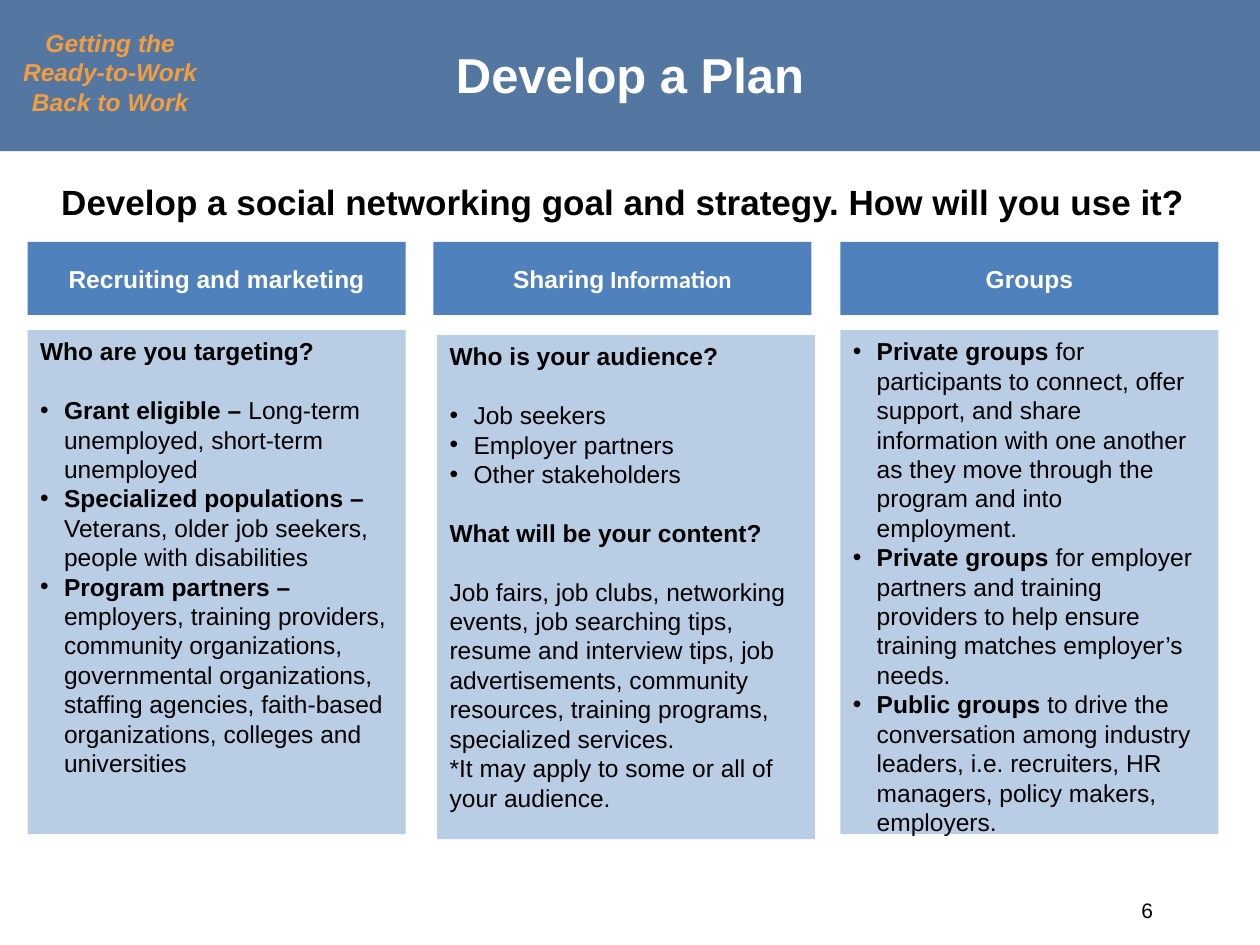
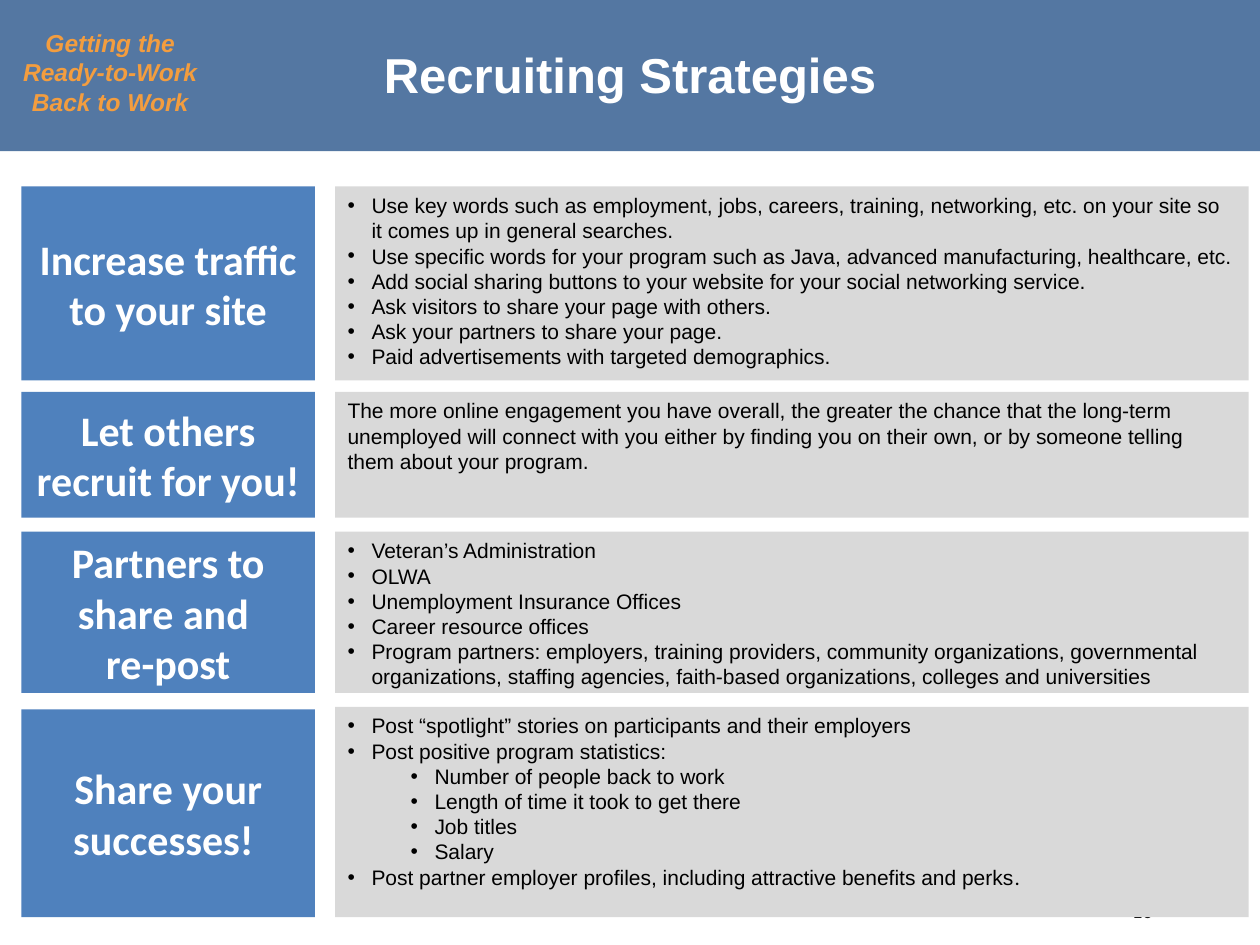
from lxml import etree
from pptx import Presentation
from pptx.dml.color import RGBColor
from pptx.enum.shapes import MSO_SHAPE
from pptx.enum.text import MSO_ANCHOR as Anchor, PP_ALIGN as Align
from pptx.oxml.ns import qn
from pptx.util import Inches, Pt

WHITE = RGBColor(0xFF, 0xFF, 0xFF)
BLACK = RGBColor(0x00, 0x00, 0x00)
BAND = RGBColor(0x37, 0x60, 0x92)
ORANGE = RGBColor(0xF3, 0x9D, 0x3F)
BLUE = RGBColor(0x4F, 0x81, 0xBD)
PALE_BLUE = RGBColor(0xB9, 0xCD, 0xE5)
GREY = RGBColor(0xD9, 0xD9, 0xD9)

TAGLINE = "Getting the Ready-to-Work Back to Work"

# Fonts: size in points, typeface, colour
TITLE = dict(size=28, name="Arial", color=WHITE, bold=True)
TAG = dict(size=14, name="Arial", color=ORANGE, bold=True, italic=True)
QUESTION = dict(size=20, name="Arial", color=BLACK, bold=True)
COLUMN_HEAD = dict(size=14, name="Arial", color=WHITE, bold=True)
COLUMN_TEXT = dict(size=14, name="Arial", color=BLACK, bold=False)
ROW_HEAD = dict(size=24, name="Calibri", color=WHITE, bold=True)
ROW_TEXT = dict(size=12, name="Arial", color=BLACK)
PAGE_ARIAL = dict(size=12, name="Arial", color=BLACK)
PAGE_CALIBRI = dict(PAGE_ARIAL, name="Calibri")

BOLD = dict(bold=True)
CALIBRI = dict(name="Calibri")

# A paragraph is (kind, run, run, ...); a run is a string or (string, font changes).
# Kind: left margin of a bullet in inches (None for no bullet), then lines of space before.
PLAIN, SPACED = (None, 0), (None, 1)
BULLET, FIRST_BULLET, SUB_BULLET = (0.19, 0), (0.19, 1), (0.69, 0)
HANGING = 0.19

PLAN_QUESTION = "Develop a social networking goal and strategy. How will you use it?"

# Left of the heading, heading runs, left and top of the body, body paragraphs
PLAN_COLUMNS = [
    (0.22, ["Recruiting and marketing"], 0.22, 2.62, [
        (PLAIN, ("Who are you targeting?", BOLD)),
        (FIRST_BULLET, ("Grant eligible – ", BOLD), "Long-term unemployed, short-term unemployed"),
        (BULLET, ("Specialized populations – ", BOLD),
         "Veterans, older job seekers, people with disabilities"),
        (BULLET, ("Program partners – ", BOLD),
         "employers, training providers, community organizations, governmental organizations, "
         "staffing agencies, faith-based organizations, colleges and universities"),
    ]),
    (3.44, ["Sharing", (" Information", CALIBRI)], 3.47, 2.66, [
        (PLAIN, ("Who is your audience?", BOLD)),
        (FIRST_BULLET, "Job seekers"),
        (BULLET, "Employer partners"),
        (BULLET, "Other stakeholders"),
        (SPACED, ("What will be your content?", BOLD)),
        (SPACED, "Job fairs, job clubs, networking events, job searching tips, resume and "
                 "interview tips, job advertisements, community resources, training programs, "
                 "specialized services."),
        (PLAIN, "*It may apply to some or all of your audience."),
    ]),
    (6.67, ["Groups"], 6.67, 2.62, [
        (BULLET, ("Private groups ", BOLD),
         "for participants to connect, offer support, and share information with one another "
         "as they move through the program and into employment."),
        (BULLET, ("Private groups ", BOLD),
         "for employer partners and training providers to help ensure training matches "
         "employer’s needs."),
        (BULLET, ("Public groups ", BOLD),
         "to drive the conversation among industry leaders, i.e. recruiters, HR managers, "
         "policy makers, employers."),
    ]),
]

# Top of the label, top of the text, shared bottom, label lines, text paragraphs
STRATEGY_ROWS = [
    (1.48, 1.48, 3.02, ["Increase traffic to your site"], [
        (BULLET, "Use key words such as employment, jobs, careers, training, networking, etc. "
                 "on your site so it comes up in general searches."),
        (BULLET, "Use specific words for your program such as Java, advanced manufacturing, "
                 "healthcare, etc."),
        (BULLET, "Add social sharing buttons to your website for your social networking service."),
        (BULLET, "Ask visitors to share your page with others."),
        (BULLET, "Ask your partners to share your page."),
        (BULLET, "Paid advertisements with targeted demographics."),
    ]),
    (3.11, 3.11, 4.11, ["Let others recruit for you!"], [
        (PLAIN, "The more online engagement you have overall, the greater the chance that the "
                "long-term unemployed will connect with you either by finding you on their own, "
                "or by someone telling them about your program."),
    ]),
    (4.22, 4.22, 5.5, ["Partners to share and ", "re-post"], [
        (BULLET, "Veteran’s Administration"),
        (BULLET, "OLWA"),
        (BULLET, "Unemployment Insurance Offices"),
        (BULLET, "Career resource offices"),
        (BULLET, "Program partners: employers, training providers, community organizations, "
                 "governmental organizations, staffing agencies, faith-based organizations, "
                 "colleges and universities"),
    ]),
    (5.63, 5.61, 7.28, ["Share your successes! "], [
        (BULLET, "Post “spotlight” stories on participants and their employers"),
        (BULLET, "Post positive program statistics:"),
        (SUB_BULLET, "Number of people back to work"),
        (SUB_BULLET, "Length of time it took to get there"),
        (SUB_BULLET, "Job titles"),
        (SUB_BULLET, "Salary"),
        (BULLET, "Post partner employer profiles, including attractive benefits and perks",
         (".", CALIBRI)),
    ]),
]


def style_run(r, font):
    for key, value in font.items():
        if key == "color":
            r.font.color.rgb = value
        else:
            setattr(r.font, key, Pt(value) if key == "size" else value)


def set_bullet(p, margin):
    pPr = p._p.get_or_add_pPr()
    pPr.set("marL", str(Inches(margin)))
    pPr.set("indent", str(-Inches(HANGING)))
    etree.SubElement(pPr, qn("a:buFont")).set("typeface", "Arial")
    etree.SubElement(pPr, qn("a:buChar")).set("char", "•")


def write(tf, paragraphs, font, align=Align.LEFT, anchor=Anchor.TOP):
    tf.word_wrap = True
    tf.vertical_anchor = anchor
    for i, ((margin, gap_lines), *runs) in enumerate(paragraphs):
        p = tf.add_paragraph() if i else tf.paragraphs[0]
        p.alignment = align
        if gap_lines:
            p.space_before = Pt(font["size"] * 1.2 * gap_lines)
        if margin is not None:
            set_bullet(p, margin)
        for run in runs:
            text, changes = (run, {}) if isinstance(run, str) else run
            r = p.add_run()
            r.text = text
            style_run(r, {**font, **changes})


def add_text(slide, text, at, font, align=Align.CENTER, anchor=Anchor.MIDDLE):
    tb = slide.shapes.add_textbox(*map(Inches, at))
    write(tb.text_frame, [(PLAIN, text)], font, align, anchor)


def add_box(slide, at, color):
    sp = slide.shapes.add_shape(MSO_SHAPE.RECTANGLE, *map(Inches, at))
    sp.shadow.inherit = False
    sp.fill.solid()
    sp.fill.fore_color.rgb = color
    sp.line.fill.background()
    return sp


def add_label(slide, at, paragraphs, font):
    write(add_box(slide, at, BLUE).text_frame, paragraphs, font, Align.CENTER, Anchor.MIDDLE)


def put_band_on_layout(slide):
    """Draw the translucent title band and move it behind everything on the layout."""
    band = add_box(slide, (-0.01, 0, 10.01, 1.2), BAND).element
    color = band.find(".//" + qn("a:srgbClr"))
    etree.SubElement(color, qn("a:alpha")).set("val", "85000")
    band.nvSpPr.cNvPr.set("id", "20")
    slide.slide_layout.shapes.element.insert(2, band)


def add_slide(prs, title, page, page_font):
    slide = prs.slides.add_slide(prs.slide_layouts[5])
    sp = slide.shapes.title
    sp.left, sp.top, sp.width, sp.height = map(Inches, (0, 0, 10, 1.17))
    write(sp.text_frame, [(PLAIN, title)], TITLE, Align.CENTER, Anchor.MIDDLE)
    add_text(slide, page, (6.92, 7.02, 2.33, 0.4), page_font, Align.RIGHT)
    add_text(slide, TAGLINE, (0, -0.02, 1.75, 1.18), TAG)
    return slide


def build_plan(prs):
    slide = add_slide(prs, "Develop a Plan", "6", PAGE_ARIAL)
    for head_left, head, left, top, body in PLAN_COLUMNS:
        add_label(slide, (head_left, 1.92, 3, 0.58), [(PLAIN, *head)], COLUMN_HEAD)
        write(add_box(slide, (left, top, 3, 4), PALE_BLUE).text_frame, body, COLUMN_TEXT)
    add_text(slide, PLAN_QUESTION, (0.22, 1.38, 9.45, 0.44), QUESTION, anchor=Anchor.TOP)
    return slide


def build_strategies(prs):
    slide = add_slide(prs, "Recruiting Strategies", "10", PAGE_CALIBRI)
    for label_top, top, bottom, label, body in STRATEGY_ROWS:
        add_label(slide, (0.17, label_top, 2.33, bottom - label_top),
                  [(PLAIN, line) for line in label], ROW_HEAD)
        write(add_box(slide, (2.66, top, 7.25, bottom - top), GREY).text_frame, body, ROW_TEXT)


def main():
    prs = Presentation()
    prs.slide_width, prs.slide_height = Inches(10), Inches(7.5)
    put_band_on_layout(build_plan(prs))
    build_strategies(prs)
    prs.save("out.pptx")


if __name__ == "__main__":
    main()
